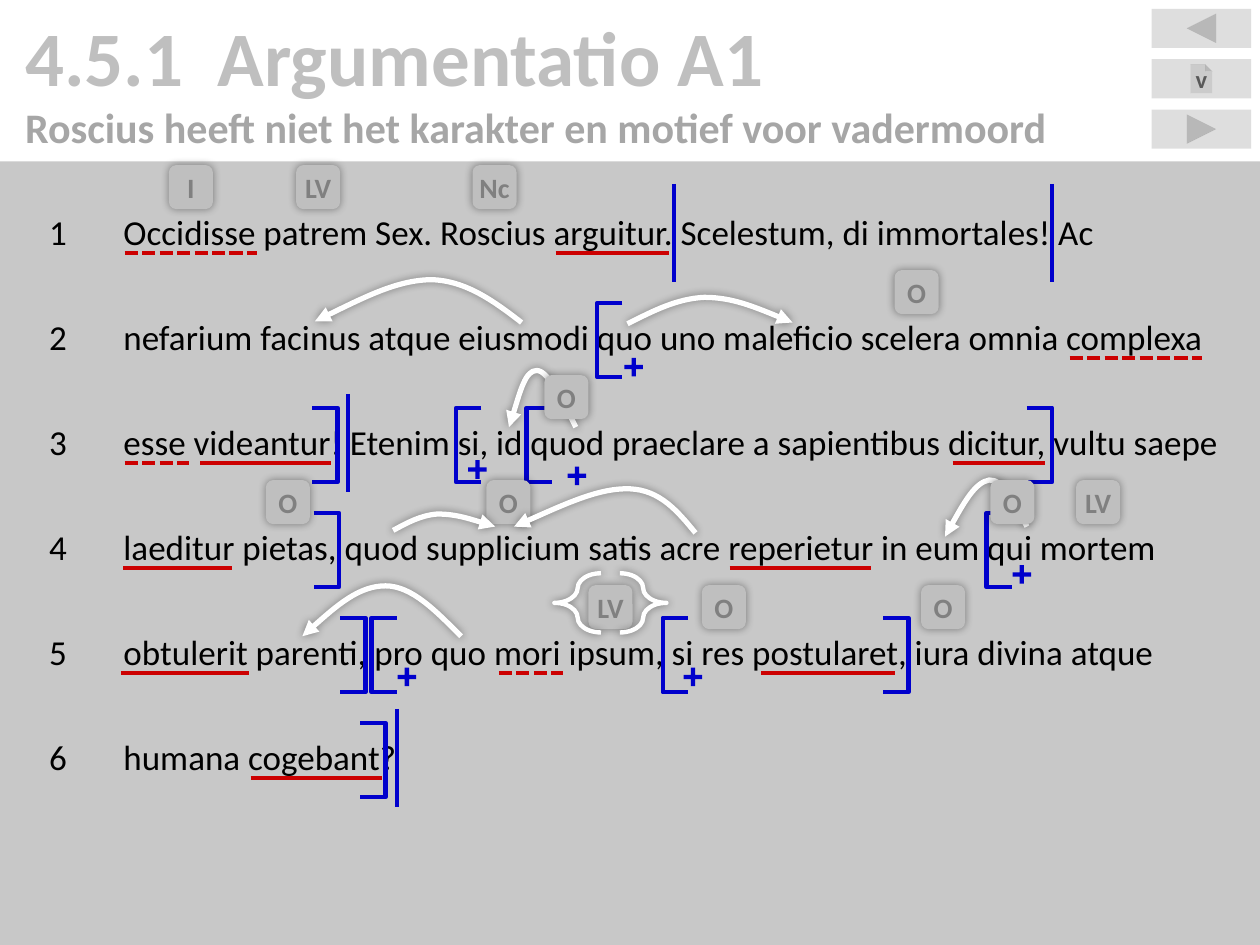
import dataclasses
import itertools
import typing

import lxml.etree
import pptx
import pptx.dml.color
import pptx.enum.dml
import pptx.enum.shapes
import pptx.enum.text
import pptx.oxml.ns
import pptx.util

WIDTH, HEIGHT = pptx.util.Inches(10), pptx.util.Inches(7.5)
COLUMN = WIDTH / 10
PITCH = 7.5 / 9
HEADER = 1.28
LABEL_SIZE, PLUS_SIZE = 0.35, 0.2
BRACKET_WIDTH, BRACKET_HEIGHT = 0.2, 0.59
BLUE, RED, GRAY, WHITE = "0000CC", "CC0000", "BFBFBF", "FFFFFF"
Shapes = pptx.enum.shapes.MSO_SHAPE
Align = pptx.enum.text.PP_ALIGN
Anchor = pptx.enum.text.MSO_ANCHOR
qn = pptx.oxml.ns.qn
Point = tuple[float, float]


@dataclasses.dataclass
class Underline:
    row: int
    left: float
    right: float
    dashed: bool = False


@dataclasses.dataclass
class Bracket:
    row: int
    left: float
    opening: bool


@dataclasses.dataclass
class Plus:
    row: int
    left: float
    drop: float = 0


@dataclasses.dataclass
class Label:
    row: int
    left: float
    text: str = "O"


VERSES = [
    "Occidisse patrem Sex. Roscius arguitur. Scelestum, di immortales! Ac",
    "nefarium facinus atque eiusmodi quo uno maleficio scelera omnia complexa",
    "esse videantur! Etenim si, id quod praeclare a sapientibus dicitur, vultu saepe",
    "laeditur pietas, quod supplicium satis acre reperietur in eum qui mortem",
    "obtulerit parenti, pro quo mori ipsum, si res postularet, iura divina atque",
    "humana cogebant?",
]
DIVIDERS = [(0, 5.35), (0, 8.35), (2, 2.76), (5, 3.15)]
UNDERLINES = [
    Underline(0, 0.99, 2.04, True), Underline(0, 4.41, 5.31), Underline(1, 8.49, 9.54, True),
    Underline(2, 0.99, 1.5, True), Underline(2, 1.59, 2.63), Underline(2, 7.56, 8.29),
    Underline(3, 0.98, 1.84), Underline(3, 5.79, 6.91), Underline(4, 0.96, 1.98),
    Underline(4, 3.96, 4.47, True), Underline(4, 6.04, 7.1), Underline(5, 1.99, 3.03),
]
BRACKETS = [
    Bracket(1, 4.74, True), Bracket(2, 2.48, False), Bracket(2, 3.62, True),
    Bracket(2, 4.18, True), Bracket(2, 8.15, False), Bracket(3, 2.49, False),
    Bracket(3, 7.83, True), Bracket(4, 2.7, False), Bracket(4, 2.95, True),
    Bracket(4, 5.26, True), Bracket(4, 7.01, False), Bracket(5, 2.86, False),
]
PLUSES = [Plus(1, 4.93, 0.02), Plus(2, 3.69), Plus(2, 4.48, 0.05), Plus(3, 8.01),
          Plus(4, 3.13, -0.02), Plus(4, 5.4, -0.02)]
LABELS = [
    Label(0, 1.34, "I"), Label(0, 2.35, "LV"), Label(0, 3.75, "Nc"), Label(1, 7.1),
    Label(2, 4.32), Label(3, 2.11), Label(3, 3.86), Label(3, 7.86), Label(3, 8.54, "LV"),
    Label(4, 4.67, "LV"), Label(4, 5.57), Label(4, 7.31),
]
ARCS_BEHIND = [
    [(4.14, 2.56), (3.92, 2.39), (3.7, 2.23), (3.43, 2.22), (3.16, 2.22), (2.83, 2.39), (2.5, 2.55)],
    [(4.98, 2.57), (5.18, 2.47), (5.37, 2.37), (5.59, 2.36), (5.81, 2.36), (6.05, 2.46), (6.29, 2.56)],
    [(4.57, 3.39), (4.46, 3.17), (4.35, 2.94), (4.26, 2.94), (4.17, 2.94), (4.11, 3.17), (4.04, 3.39)],
    [(8.15, 4.18), (8.05, 3.99), (7.96, 3.8), (7.85, 3.81), (7.74, 3.83), (7.62, 4.04), (7.5, 4.26)],
    [(3.66, 5.05), (3.46, 4.85), (3.27, 4.65), (3.06, 4.65), (2.85, 4.65), (2.62, 4.85), (2.4, 5.05)],
]
ARCS_FRONT = [
    [(3.12, 4.21), (3.23, 4.15), (3.34, 4.09), (3.47, 4.08), (3.61, 4.08), (3.77, 4.13), (3.93, 4.18)],
    [(5.52, 4.23), (5.38, 4.06), (5.24, 3.89), (5, 3.88), (4.76, 3.87), (4.42, 4.03), (4.08, 4.18)],
]


def cells(*counts: float) -> list[int]:
    return [round(count * COLUMN) for count in counts]


def on_row(row: int, offset: float) -> float:
    return offset + row * PITCH


def paint(color_format: typing.Any, color: str) -> None:
    color_format.rgb = pptx.dml.color.RGBColor.from_string(color)


def add_alpha(parent: typing.Any, percent: int) -> None:
    lxml.etree.SubElement(parent, qn("a:alpha")).set("val", str(percent * 1000))


def set_line(shape: typing.Any, color: str, width: float) -> None:
    paint(shape.line.fill.fore_color if shape.line.fill.solid() else shape.line.color, color)
    shape.line.width = pptx.util.Pt(width)


def add_glow(shape: typing.Any) -> None:
    effects = shape.element.spPr.find(qn("a:effectLst"))
    shadow = lxml.etree.SubElement(effects, qn("a:outerShdw"), blurRad=str(pptx.util.Pt(5)),
                                   dist="0", dir="0", algn="ctr", rotWithShape="0")
    add_alpha(lxml.etree.SubElement(shadow, qn("a:srgbClr"), val="000000"), 40)


def add_box(slide: typing.Any, kind: typing.Any, box: typing.Sequence[float],
            fill: str | None = None, opacity: int = 100) -> typing.Any:
    shape = slide.shapes.add_shape(kind, *cells(*box))
    shape.shadow.inherit = False
    shape.line.fill.background()
    if fill is None:
        shape.fill.background()
        return shape
    shape.fill.solid()
    paint(shape.fill.fore_color, fill)
    if opacity < 100:
        add_alpha(shape.element.spPr.find(qn("a:solidFill"))[0], opacity)
    return shape


def set_frame(shape: typing.Any, anchor: typing.Any, margins: typing.Sequence[float]) -> typing.Any:
    frame = shape.text_frame
    frame.word_wrap = True
    frame.vertical_anchor = anchor
    frame.margin_left, frame.margin_top, frame.margin_right, frame.margin_bottom = cells(*margins)
    return frame


def write(frame: typing.Any, text: str, *, size: float, color: str, bold: bool = False,
          align: typing.Any = Align.LEFT, after: float = 0, tab: float | None = None) -> None:
    paragraph = frame.add_paragraph() if frame.text else frame.paragraphs[0]
    paragraph.alignment = align
    paragraph.space_after = pptx.util.Pt(after)
    if tab is not None:
        tabs = lxml.etree.SubElement(paragraph._p.get_or_add_pPr(), qn("a:tabLst"))
        lxml.etree.SubElement(tabs, qn("a:tab"), pos=str(cells(tab)[0]), algn="l")
    run = paragraph.add_run()
    run.text = text
    run.font.name = "Calibri"
    run.font.size = pptx.util.Pt(size)
    run.font.bold = bold
    paint(run.font.color, color)


def draw_line(slide: typing.Any, start: Point, end: Point, color: str, dashed: bool = False) -> None:
    connector = slide.shapes.add_connector(pptx.enum.shapes.MSO_CONNECTOR.STRAIGHT, *cells(*start, *end))
    set_line(connector, color, 2.5)
    if dashed:
        connector.line.dash_style = pptx.enum.dml.MSO_LINE.SQUARE_DOT
    lxml.etree.SubElement(connector.element.spPr, qn("a:effectLst"))


def draw_outline(slide: typing.Any, points: list[Point], color: str, width: float) -> typing.Any:
    builder = slide.shapes.build_freeform(*cells(*points[0]))
    builder.add_line_segments([cells(*point) for point in points[1:]], close=False)
    shape = builder.convert_to_shape()
    shape.shadow.inherit = False
    shape.fill.background()
    set_line(shape, color, width)
    return shape


def draw_bracket(slide: typing.Any, bracket: Bracket) -> None:
    tips, spine = bracket.left, bracket.left + BRACKET_WIDTH
    if bracket.opening:
        tips, spine = spine, tips
    top = on_row(bracket.row, 1.57)
    bottom = top + BRACKET_HEIGHT
    draw_outline(slide, [(tips, top), (spine, top), (spine, bottom), (tips, bottom)], BLUE, 2.5)


def draw_arc(slide: typing.Any, points: list[Point]) -> None:
    shape = draw_outline(slide, points, WHITE, 3)
    segments = list(shape.element.iter(qn("a:lnTo")))
    outline = segments[0].getparent()
    for start in range(0, len(segments), 3):
        curve = lxml.etree.SubElement(outline, qn("a:cubicBezTo"))
        for segment in itertools.islice(segments, start, start + 3):
            curve.append(segment[0])
            outline.remove(segment)
    lxml.etree.SubElement(shape.element.spPr.find(qn("a:ln")), qn("a:tailEnd"), type="triangle")
    add_glow(shape)


def draw_label(slide: typing.Any, label: Label) -> None:
    box = (label.left, on_row(label.row, 1.31), LABEL_SIZE, LABEL_SIZE)
    shape = add_box(slide, Shapes.ROUNDED_RECTANGLE, box, GRAY)
    add_glow(shape)
    frame = set_frame(shape, Anchor.MIDDLE, (0, 0, 0, 0))
    write(frame, label.text, size=16, color="808080", bold=True, align=Align.CENTER)


def draw_brace(slide: typing.Any, left: float, flipped: bool) -> None:
    shape = add_box(slide, Shapes.LEFT_BRACE, (left, 4.55, 0.37, 0.47))
    shape.adjustments[0] = 0.35
    set_line(shape, WHITE, 2.5)
    if flipped:
        shape.element.spPr.find(qn("a:xfrm")).set("flipH", "1")
    add_glow(shape)


def draw_header(slide: typing.Any) -> None:
    title = set_frame(slide.shapes.add_textbox(*cells(0, 0, 10, HEADER)), Anchor.MIDDLE, (0.2,) * 4)
    write(title, "4.5.1\tArgumentatio A1", size=44, color=GRAY, bold=True, tab=1.53)
    write(title, "Roscius heeft niet het karakter en motief voor vadermoord",
          size=24, color="A6A6A6", bold=True)
    kinds = [Shapes.ACTION_BUTTON_BACK_OR_PREVIOUS, Shapes.ACTION_BUTTON_DOCUMENT,
             Shapes.ACTION_BUTTON_FORWARD_OR_NEXT]
    buttons = [add_box(slide, kind, (9.14, 0.07 + 0.4 * index, 0.79, 0.31), GRAY, 50)
               for index, kind in enumerate(kinds)]
    frame = set_frame(buttons[1], Anchor.MIDDLE, (0.1, 0.05, 0.1, 0.05))
    write(frame, "v", size=14, color="595959", bold=True, align=Align.CENTER)


def draw_verses(slide: typing.Any) -> None:
    body = add_box(slide, Shapes.RECTANGLE, (0, HEADER, 10, 7.5 - HEADER), GRAY, 85)
    frame = set_frame(body, Anchor.TOP, (0.39, 0.39, 0.2, 0.39))
    for number, verse in enumerate(VERSES, 1):
        write(frame, f"{number}\t{verse}", size=20, color="000000", after=36, tab=0.59)


def draw_marks(slide: typing.Any) -> None:
    for row, left in DIVIDERS:
        draw_line(slide, (left, on_row(row, 1.46)), (left, on_row(row, 2.24)), BLUE)
    for mark in UNDERLINES:
        height = on_row(mark.row, 2.01)
        draw_line(slide, (mark.left, height), (mark.right, height), RED, mark.dashed)
    for bracket in BRACKETS:
        draw_bracket(slide, bracket)
    for plus in PLUSES:
        box = (plus.left, on_row(plus.row, 1.96) + plus.drop, PLUS_SIZE, PLUS_SIZE)
        add_box(slide, Shapes.MATH_PLUS, box, BLUE).adjustments[0] = 0.17
    for points in ARCS_BEHIND:
        draw_arc(slide, points)
    for label in LABELS:
        draw_label(slide, label)
    for left, flipped in [(4.4, False), (4.92, True)]:
        draw_brace(slide, left, flipped)
    for points in ARCS_FRONT:
        draw_arc(slide, points)


def main() -> None:
    presentation = pptx.Presentation()
    presentation.slide_width, presentation.slide_height = WIDTH, HEIGHT
    slide = presentation.slides.add_slide(presentation.slide_layouts[6])
    draw_header(slide)
    draw_verses(slide)
    draw_marks(slide)
    presentation.save("out.pptx")


if __name__ == "__main__":
    main()
